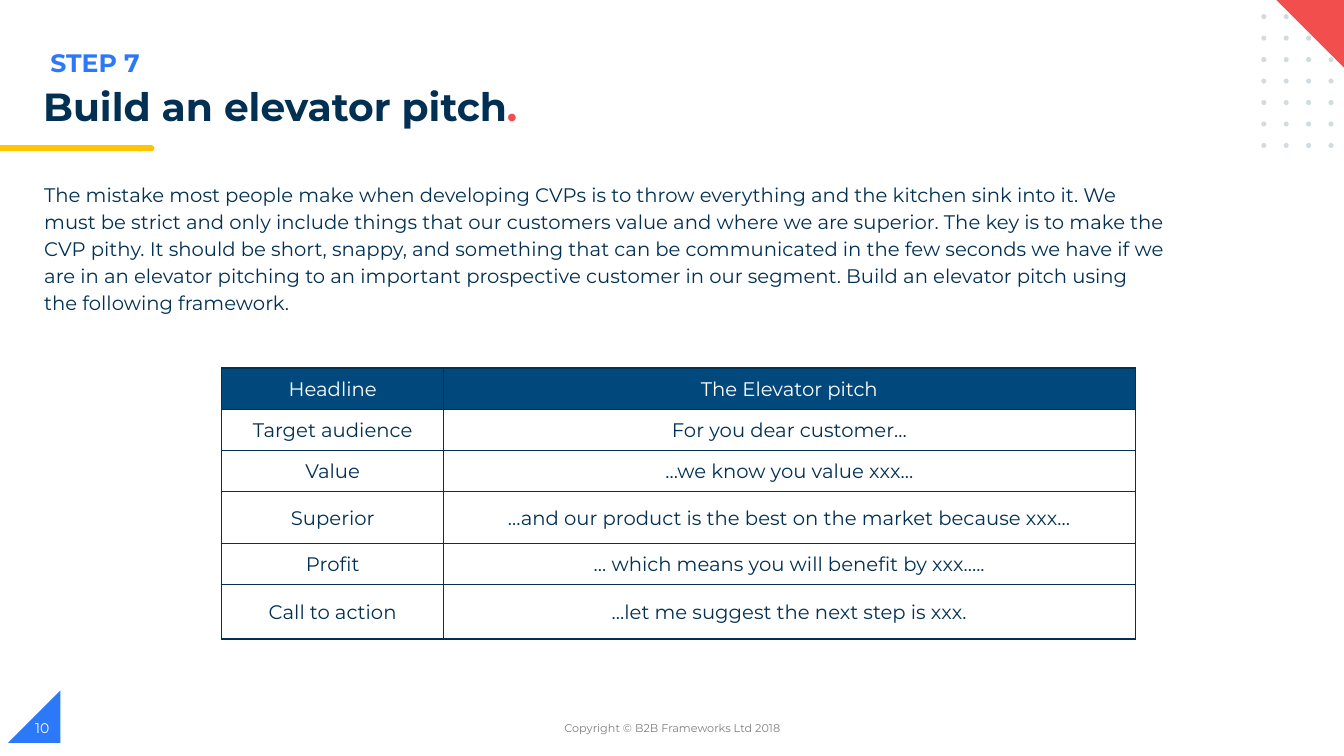
from itertools import product

from lxml.etree import SubElement
from pptx import Presentation
from pptx.dml.color import RGBColor
from pptx.enum.shapes import MSO_SHAPE
from pptx.enum.text import MSO_ANCHOR, PP_ALIGN
from pptx.oxml.ns import qn
from pptx.util import Inches, Pt

NAVY = "023053"
BLUE = "2B79F8"
RED = "F24E4E"
YELLOW = "FFC600"
WHITE = "FFFFFF"

INTRODUCTION = (
    "The mistake most people make when developing CVPs is to throw everything and the "
    "kitchen sink into it. We must be strict and only include things that our customers "
    "value and where we are superior. The key is to make the CVP pithy. It should be short, "
    "snappy, and something that can be communicated in the few seconds we have if we are in "
    "an elevator pitching to an important prospective customer in our segment. Build an "
    "elevator pitch using the following framework."
)
PITCH_ROWS = [
    ("Headline", "The Elevator pitch", 0.41),
    ("Target audience", "For you dear customer…", 0.41),
    ("Value", "…we know you value xxx…", 0.41),
    ("Superior", "…and our product is the best on the market because xxx…", 0.51),
    ("Profit", "… which means you will benefit by xxx…..", 0.41),
    ("Call to action", "…let me suggest the next step is xxx.", 0.54),
]


def color(value):
    return RGBColor.from_string(value)


class SlideBuilder:
    font_name = "Montserrat"

    def __init__(self, slide):
        self.slide = slide

    def shape(self, kind, left, top, width, height, fill, rotation=0):
        shape = self.slide.shapes.add_shape(
            kind, Inches(left), Inches(top), Inches(width), Inches(height)
        )
        shape.shadow.inherit = False
        shape.fill.solid()
        shape.fill.fore_color.rgb = color(fill)
        shape.line.fill.background()
        shape.rotation = rotation

    def run(self, paragraph, text, size, fill, bold=False):
        run = paragraph.add_run()
        run.text = text
        run.font.name = self.font_name
        run.font.size = Pt(size)
        run.font.bold = bold
        run.font.color.rgb = color(fill)

    def text(self, left, top, width, height, runs, size, bold=False,
             align=PP_ALIGN.LEFT, anchor=MSO_ANCHOR.TOP, spacing=1.0):
        box = self.slide.shapes.add_textbox(
            Inches(left), Inches(top), Inches(width), Inches(height)
        )
        frame = box.text_frame
        frame.word_wrap = True
        frame.vertical_anchor = anchor
        paragraph = frame.paragraphs[0]
        paragraph.alignment = align
        paragraph.line_spacing = spacing
        for text, fill in runs:
            self.run(paragraph, text, size, fill, bold)

    def cell_borders(self, cell, fill):
        properties = cell._tc.get_or_add_tcPr()
        for position, side in enumerate(("a:lnL", "a:lnR", "a:lnT", "a:lnB")):
            line = SubElement(properties, qn(side), w=str(Pt(1)))
            solid = SubElement(line, qn("a:solidFill"))
            SubElement(solid, qn("a:srgbClr"), val=fill)
            properties.remove(line)
            properties.insert(position, line)

    def table(self, left, top, column_widths, rows):
        heights = [height for *_, height in rows]
        frame = self.slide.shapes.add_table(
            len(rows), len(column_widths), Inches(left), Inches(top),
            Inches(sum(column_widths)), Inches(sum(heights))
        )
        table = frame.table
        table.horz_banding = False
        for column, width in zip(table.columns, column_widths):
            column.width = Inches(width)
        for row_index, (*texts, height) in enumerate(rows):
            table.rows[row_index].height = Inches(height)
            header = row_index == 0
            for column_index, text in enumerate(texts):
                cell = table.cell(row_index, column_index)
                cell.fill.solid()
                cell.fill.fore_color.rgb = color("01487C" if header else WHITE)
                cell.vertical_anchor = MSO_ANCHOR.MIDDLE
                cell.margin_left = cell.margin_right = cell.margin_top = Inches(0.01)
                cell.margin_bottom = 0
                paragraph = cell.text_frame.paragraphs[0]
                paragraph.alignment = PP_ALIGN.CENTER
                self.run(paragraph, text, 14, WHITE if header else NAVY)
                self.cell_borders(cell, NAVY)


def main():
    presentation = Presentation()
    presentation.slide_width = Inches(13.33)
    presentation.slide_height = Inches(7.5)
    builder = SlideBuilder(presentation.slides.add_slide(presentation.slide_layouts[6]))

    builder.shape(MSO_SHAPE.RIGHT_TRIANGLE, 0.08, 6.85, 0.52, 0.52, BLUE, 270)
    builder.shape(MSO_SHAPE.FLOWCHART_TERMINATOR, 1.34, 1.44, 0.19, 0.06, YELLOW)
    builder.shape(MSO_SHAPE.RECTANGLE, 0, 1.44, 1.41, 0.06, YELLOW)
    for row, column in product(range(7), range(4)):
        builder.shape(MSO_SHAPE.OVAL, 12.51 + 0.222 * column, 0.14 + 0.213 * row,
                      0.05, 0.05, "D1DBE0")
    builder.shape(MSO_SHAPE.RIGHT_TRIANGLE, 12.65, -0.01, 0.72, 0.72, RED, 180)

    builder.table(2.2, 3.65, (2.2, 6.86), PITCH_ROWS)
    builder.text(0.34, 1.73, 11.33, 1.42, [(INTRODUCTION, NAVY)], 14, spacing=1.15)
    builder.text(0.33, 0.82, 5.64, 0.56, [("Build an elevator pitch", NAVY), (".", RED)],
                 28, bold=True, spacing=0.9)
    builder.text(4.42, 7.02, 4.5, 0.4, [("Copyright © B2B Frameworks Ltd 2018", "7F7F7F")],
                 8, align=PP_ALIGN.CENTER, anchor=MSO_ANCHOR.MIDDLE)
    builder.text(0.25, 7.02, 3, 0.4, [("10", WHITE)], 10, anchor=MSO_ANCHOR.MIDDLE)
    builder.text(0.4, 0.42, 1.39, 0.4, [("STEP 7", BLUE)], 18, bold=True)

    presentation.save("out.pptx")


if __name__ == "__main__":
    main()
